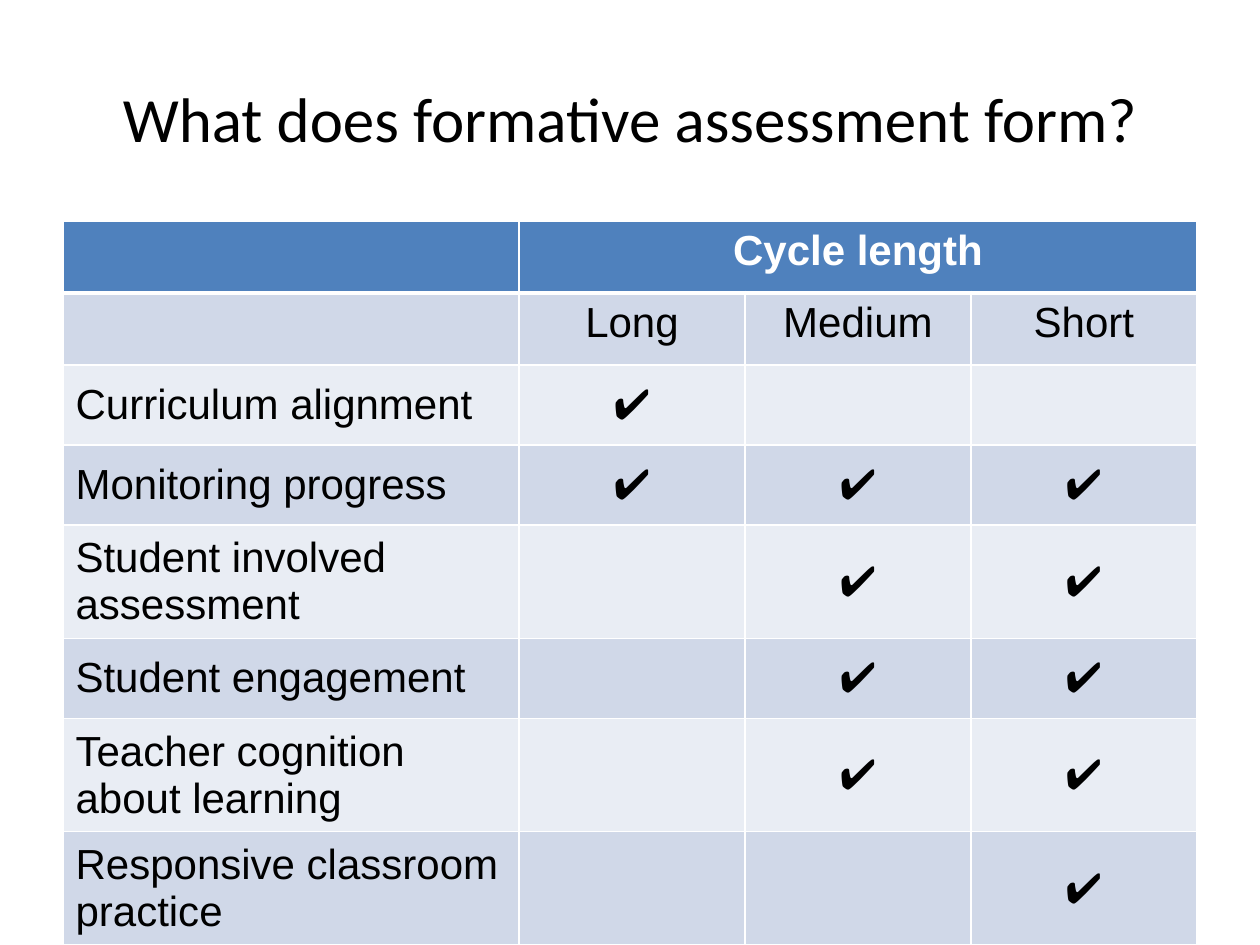
import pptx
import pptx.util
import pptx.dml.color
import pptx.enum.text
import pptx.oxml
import pptx.oxml.ns

PX = 914400 / 126
HUES = {"head": "4F81BD", "dark": "D0D8E8", "light": "E9EDF4",
        "white": "FFFFFF", "black": "000000"}
ALIGN = pptx.enum.text.PP_ALIGN
MID = pptx.enum.text.MSO_ANCHOR.MIDDLE


def px(num):
    return pptx.util.Emu(round(num * PX))


def write(frame, text, size=24, font="Arial", hue="black", bold=False,
          align=ALIGN.CENTER):
    para = frame.paragraphs[0]
    para.alignment = align
    run = para.add_run()
    run.text = text
    run.font.size = pptx.util.Pt(size)
    run.font.name = font
    run.font.bold = bold
    run.font.color.rgb = pptx.dml.color.RGBColor.from_string(HUES[hue])


deck = pptx.Presentation()
deck.slide_width, deck.slide_height = px(1260), px(945)
slide = deck.slides.add_slide(deck.slide_layouts[6])

# Title
box = slide.shapes.add_textbox(px(63), px(38), px(1134), px(158))
box.text_frame.word_wrap = True
box.text_frame.vertical_anchor = MID
write(box.text_frame, "What does formative assessment form?", size=36, font="Calibri")

# Table grid
wide = [456, 226, 226, 226]
tall = [72] * 2 + [80] * 6
table = slide.shapes.add_table(len(tall), len(wide), px(63), px(221),
                               px(sum(wide)), px(sum(tall))).table
for col, num in zip(table.columns, wide):
    col.width = px(num)
for row, num in zip(table.rows, tall):
    row.height = px(num)

# Fills and white rules, with a thick one under the head
for r, row in enumerate(table.rows):
    for cell in row.cells:
        cell.fill.solid()
        hue = "head" if r == 0 else "dark" if r % 2 else "light"
        cell.fill.fore_color.rgb = pptx.dml.color.RGBColor.from_string(HUES[hue])
        for n, side in enumerate(("lnL", "lnR", "lnT", "lnB")):
            thick = (r, side) in ((0, "lnB"), (1, "lnT"))
            line = pptx.oxml.parse_xml(
                f'<a:{side} {pptx.oxml.ns.nsdecls("a")} w="{38100 if thick else 12700}">'
                f'<a:solidFill><a:srgbClr val="{HUES["white"]}"/></a:solidFill></a:{side}>')
            cell._tc.tcPr.insert(n, line)

# Head rows
table.cell(0, 1).merge(table.cell(0, 3))
write(table.cell(0, 1).text_frame, "Cycle length", hue="white", bold=True)
for c, name in enumerate(("Long", "Medium", "Short"), 1):
    write(table.cell(1, c).text_frame, name)

# Purposes, each with the columns that are ticked
goals = [
    ("Curriculum alignment", [1]),
    ("Monitoring progress", [1, 2, 3]),
    ("Student involved assessment", [2, 3]),
    ("Student engagement", [2, 3]),
    ("Teacher cognition about learning", [2, 3]),
    ("Responsive classroom practice", [3]),
]
for r, (goal, ticks) in enumerate(goals, 2):
    for cell in table.rows[r].cells:
        cell.vertical_anchor = MID
    write(table.cell(r, 0).text_frame, goal, align=ALIGN.LEFT)
    for c in ticks:
        write(table.cell(r, c).text_frame, "✔")

deck.save("out.pptx")
